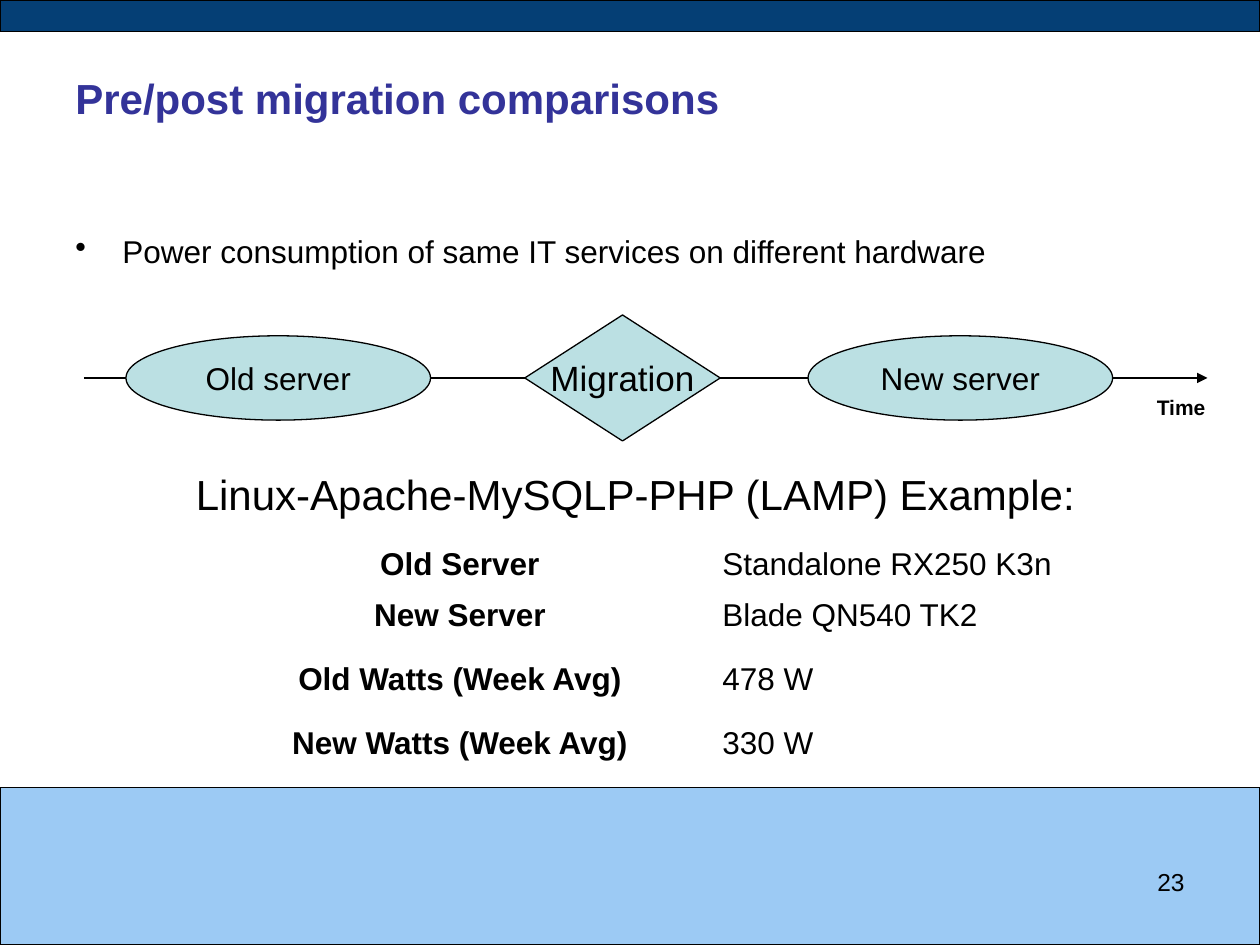
from dataclasses import dataclass
from lxml.etree import SubElement
from pptx import Presentation
from pptx.dml.color import RGBColor
from pptx.enum.shapes import MSO_CONNECTOR, MSO_SHAPE
from pptx.enum.text import MSO_ANCHOR, PP_ALIGN
from pptx.oxml.ns import qn
from pptx.util import Cm, Pt


@dataclass(frozen=True)
class Theme:
    font: str = "Arial"
    ink: str = "000000"
    title: str = "333399"
    top_band: str = "053F75"
    bottom_band: str = "9CCAF4"
    node: str = "BBE0E3"
    heading_size: int = 24
    milestone_size: int = 20
    body_size: int = 18
    number_size: int = 14
    label_size: int = 12
    line_width: float = 0.75


THEME = Theme()


def write_text(text_frame, text, size=THEME.body_size, color=THEME.ink,
               bold=False, align=PP_ALIGN.LEFT):
    paragraph = text_frame.paragraphs[0]
    paragraph.text = text
    paragraph.alignment = align
    font = paragraph.runs[0].font
    font.name, font.size, font.bold = THEME.font, Pt(size), bold
    font.color.rgb = RGBColor.from_string(color)
    return paragraph


def add_label(slide, box, text, anchor=MSO_ANCHOR.TOP, **text_format):
    shape = slide.shapes.add_textbox(*map(Cm, box))
    shape.text_frame.word_wrap = True
    shape.text_frame.vertical_anchor = anchor
    return write_text(shape.text_frame, text, **text_format)


def style_line(line):
    line.color.rgb = RGBColor.from_string(THEME.ink)
    line.width = Pt(THEME.line_width)


def add_outlined_shape(slide, kind, box, fill):
    shape = slide.shapes.add_shape(kind, *map(Cm, box))
    shape.shadow.inherit = False
    shape.fill.solid()
    shape.fill.fore_color.rgb = RGBColor.from_string(fill)
    style_line(shape.line)
    return shape


def add_bands(slide, width, height):
    top_height, bottom_height = 0.64, 3.18
    add_outlined_shape(slide, MSO_SHAPE.RECTANGLE,
                       (0, height - bottom_height, width, bottom_height), THEME.bottom_band)
    add_outlined_shape(slide, MSO_SHAPE.RECTANGLE, (0, 0, width, top_height), THEME.top_band)


def add_bullet(slide, box, text):
    paragraph = add_label(slide, box, text)
    properties = paragraph._p.get_or_add_pPr()
    indent = Cm(0.95)
    properties.set("marL", str(indent))
    properties.set("indent", str(-indent))
    SubElement(properties, qn("a:buChar"), char="•")


def add_timeline(slide, box):
    left, top, width, height = box
    middle = top + height / 2

    # Time axis, behind the nodes
    axis = slide.shapes.add_connector(MSO_CONNECTOR.STRAIGHT, Cm(left), Cm(middle),
                                      Cm(left + width), Cm(middle))
    style_line(axis.line)
    SubElement(axis.line._get_or_add_ln(), qn("a:tailEnd"), type="triangle")
    SubElement(axis._element.spPr, qn("a:effectLst"))

    # Nodes: kind, offset, width, height, text, size
    server_size = (6.14, 1.7)
    nodes = [
        (MSO_SHAPE.OVAL, 0.85, *server_size, "Old server", THEME.body_size),
        (MSO_SHAPE.DIAMOND, 8.89, 3.94, height, "Migration", THEME.milestone_size),
        (MSO_SHAPE.OVAL, 14.6, *server_size, "New server", THEME.body_size),
    ]
    for kind, offset, node_width, node_height, text, size in nodes:
        node_box = (left + offset, middle - node_height / 2, node_width, node_height)
        node = add_outlined_shape(slide, kind, node_box, THEME.node)
        node.text_frame.word_wrap = False
        node.text_frame.vertical_anchor = MSO_ANCHOR.MIDDLE
        write_text(node.text_frame, text, size=size, align=PP_ALIGN.CENTER)

    add_label(slide, (left + width - 1.27, middle + 0.2, 1.7, 0.76), "Time",
              size=THEME.label_size, bold=True)


def add_comparison_table(slide, box, rows):
    left, top, width, height = box
    short_row = 1.0
    tall_row = (height - short_row) / (len(rows) - 1)
    name_width = 10.08
    table = slide.shapes.add_table(len(rows), 2, *map(Cm, box)).table
    table.first_row = table.horz_banding = False
    table.columns[0].width = Cm(name_width)
    table.columns[1].width = Cm(width - name_width)
    for index, (row, texts) in enumerate(zip(table.rows, rows)):
        row.height = Cm(short_row if index == 1 else tall_row)
        for column, (cell, text) in enumerate(zip(row.cells, texts)):
            is_name = column == 0
            cell.fill.background()
            cell.vertical_anchor = MSO_ANCHOR.BOTTOM
            write_text(cell.text_frame, text, bold=is_name,
                       align=PP_ALIGN.CENTER if is_name else PP_ALIGN.LEFT)


def main():
    width, height = 25.4, 19.05
    presentation = Presentation()
    presentation.slide_width, presentation.slide_height = Cm(width), Cm(height)
    slide = presentation.slides.add_slide(presentation.slide_layouts[6])

    add_bands(slide, width, height)

    # Title and statement
    add_label(slide, (1.27, 0.76, 22.86, 2.41), "Pre/post migration comparisons",
              anchor=MSO_ANCHOR.MIDDLE, size=THEME.heading_size,
              color=THEME.title, bold=True)
    add_bullet(slide, (1.27, 4.55, 22.86, 1.2),
               "Power consumption of same IT services on different hardware")

    add_timeline(slide, (1.69, 6.35, 22.65, 2.54))

    # Worked example
    add_label(slide, (0.85, 9.31, 23.92, 1.27), "Linux-Apache-MySQLP-PHP (LAMP) Example:",
              size=THEME.heading_size, align=PP_ALIGN.CENTER)
    add_comparison_table(slide, (4.23, 10.58, 17.57, 4.88), [
        ("Old Server", "Standalone RX250 K3n"),
        ("New Server", "Blade QN540 TK2"),
        ("Old Watts (Week Avg)", "478 W"),
        ("New Watts (Week Avg)", "330 W"),
    ])

    # Slide number
    add_label(slide, (18.2, 17.36, 5.93, 1.32), "23",
              size=THEME.number_size, align=PP_ALIGN.RIGHT)

    presentation.save("out.pptx")


if __name__ == "__main__":
    main()
